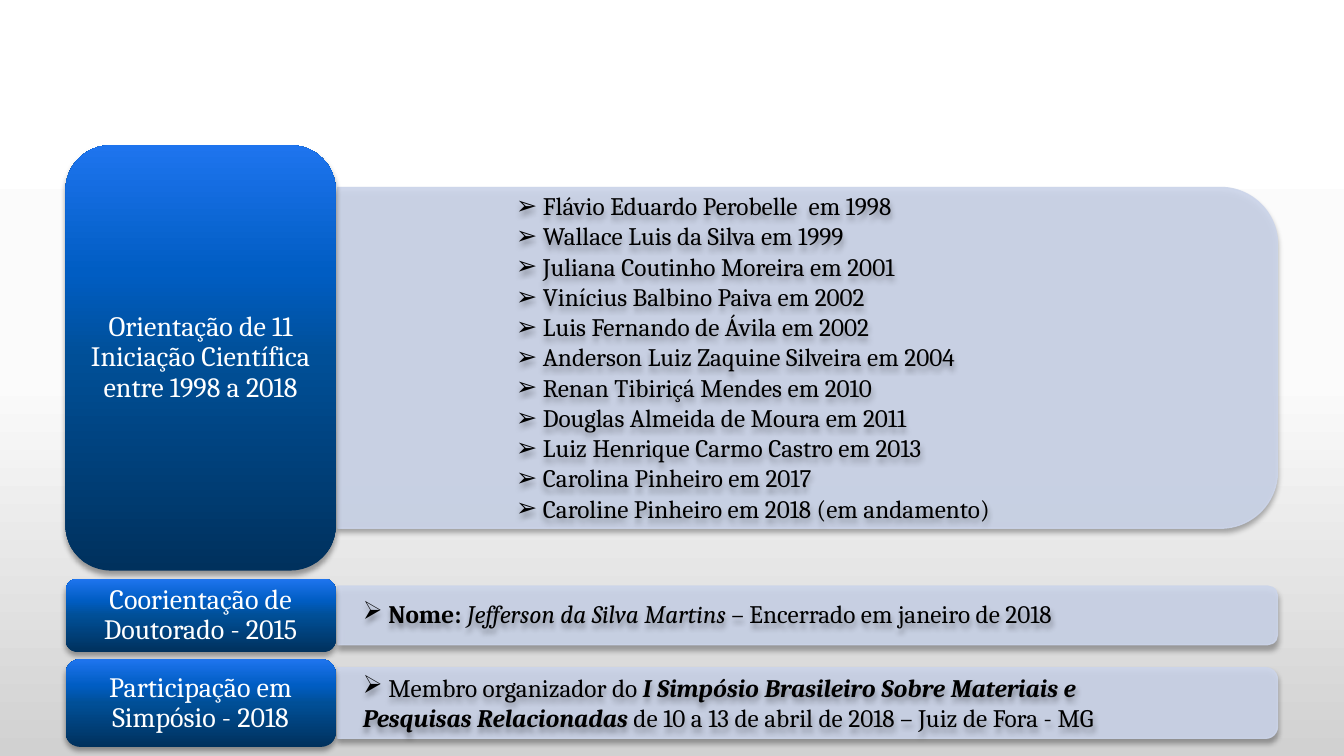
from dataclasses import dataclass

import pptx
import pptx.dml.color
import pptx.enum.shapes
import pptx.enum.text
import pptx.oxml
import pptx.oxml.ns
import pptx.util
from lxml import etree

Inches = pptx.util.Inches
Pt = pptx.util.Pt
qn = pptx.oxml.ns.qn
RGB = pptx.dml.color.RGBColor.from_string
SHAPE = pptx.enum.shapes.MSO_SHAPE
ALIGN = pptx.enum.text.PP_ALIGN
ANCHOR = pptx.enum.text.MSO_ANCHOR
FIT = pptx.enum.text.MSO_AUTO_SIZE


@dataclass(frozen=True)
class Theme:
    font: str = "Cambria"
    label_size: int = 20
    list_size: int = 18
    label_text: str = "FFFFFF"
    list_text: str = "000000"
    shadow: str = "000000"
    bar: str = "CCD5EA"
    label: tuple = ((0, "00315D"), (50, "004F97"), (70, "005DC3"), (100, "1E74EE"))
    page: tuple = ((0, "FFFFFF"), (50, "FBFBFB"), (100, "D1D1D1"))


@dataclass(frozen=True)
class Run:
    text: str
    bold: bool = False
    italic: bool = False


@dataclass(frozen=True)
class Row:
    label: str
    top: float
    height: float
    bar_height: float
    list_box: tuple[float, float, float, float]
    items: list[list[Run]]


THEME = Theme()
LABEL_LEFT, LABEL_WIDTH = 0.65, 2.68
BAR_LEFT, BAR_WIDTH = 3.35, 9.32

STUDENTS = [
    "Flávio Eduardo Perobelle  em 1998",
    "Wallace Luis da Silva em 1999",
    "Juliana Coutinho Moreira em 2001",
    "Vinícius Balbino Paiva em 2002",
    "Luis Fernando de Ávila em 2002",
    "Anderson Luiz Zaquine Silveira em 2004",
    "Renan Tibiriçá Mendes em 2010",
    "Douglas Almeida de Moura em 2011",
    "Luiz Henrique Carmo Castro em 2013",
    "Carolina Pinheiro em 2017",
    "Caroline Pinheiro em 2018 (em andamento)",
]
ROWS = [
    Row("Orientação de 11 Iniciação Científica entre 1998 a 2018", 1.44, 4.22, 3.38,
        (5.02, 1.84, 5.96, 3.43), [[Run(f" {name}")] for name in STUDENTS]),
    Row("Coorientação de Doutorado - 2015", 5.74, 0.73, 0.58,
        (3.5, 5.89, 7.98, 0.4),
        [[Run(" Nome: ", bold=True), Run("Jefferson da Silva Martins ", italic=True),
          Run("– Encerrado em janeiro de 2018")]]),
    Row("Participação em Simpósio - 2018", 6.54, 0.87, 0.7,
        (3.5, 6.62, 7.98, 0.71),
        [[Run(" Membro organizador do "),
          Run("I Simpósio Brasileiro Sobre Materiais e Pesquisas Relacionadas", True, True),
          Run(" de 10 a 13 de abril de 2018 – Juiz de Fora - MG")]]),
]


def set_format(target, values: dict) -> None:
    for name, value in values.items():
        setattr(target, name, value)


def set_gradient(fill, parent, stops: tuple, angle: int) -> None:
    """Swap the solid fill found under parent for a linear gradient, angle clockwise."""
    fill.solid()
    solid = next(parent.iter(qn("a:solidFill")))
    grad = etree.Element(qn("a:gradFill"), rotWithShape="1")
    stop_list = etree.SubElement(grad, qn("a:gsLst"))
    for position, color in stops:
        stop = etree.SubElement(stop_list, qn("a:gs"), pos=str(position * 1000))
        etree.SubElement(stop, qn("a:srgbClr"), val=color)
    etree.SubElement(grad, qn("a:lin"), ang=str(angle * 60000), scaled="0")
    solid.getparent().replace(solid, grad)


def add_shadow(sp) -> None:
    sp.shadow.inherit = False
    effects = sp._element.spPr.find(qn("a:effectLst"))
    outer = etree.SubElement(effects, qn("a:outerShdw"), blurRad=str(Pt(4)),
                             dist=str(Pt(3)), dir="5400000", rotWithShape="0")
    color = etree.SubElement(outer, qn("a:srgbClr"), val=THEME.shadow)
    etree.SubElement(color, qn("a:alpha"), val="35000")


def add_bar(shapes, row: Row) -> None:
    """Add the pale bar, a shape rounded at its top and turned to the right."""
    center_x = BAR_LEFT + BAR_WIDTH / 2
    center_y = row.top + row.height / 2
    sp = shapes.add_shape(
        SHAPE.ROUND_2_SAME_RECTANGLE,
        Inches(center_x - row.bar_height / 2), Inches(center_y - BAR_WIDTH / 2),
        Inches(row.bar_height), Inches(BAR_WIDTH))
    sp.rotation = 90
    for fill in (sp.fill, sp.line.fill):
        fill.solid()
        fill.fore_color.rgb = RGB(THEME.bar)
    sp.line.width = Pt(1)
    for color in sp._element.spPr.iter(qn("a:srgbClr")):
        etree.SubElement(color, qn("a:alpha"), val="90000")
    add_shadow(sp)


def add_label(shapes, row: Row) -> None:
    sp = shapes.add_shape(SHAPE.ROUNDED_RECTANGLE, Inches(LABEL_LEFT), Inches(row.top),
                          Inches(LABEL_WIDTH), Inches(row.height))
    set_gradient(sp.fill, sp._element.spPr, THEME.label, 270)
    sp.line.fill.background()
    add_shadow(sp)
    tf = sp.text_frame
    set_format(tf, dict(word_wrap=True, vertical_anchor=ANCHOR.MIDDLE,
                        margin_left=Inches(0.08), margin_right=Inches(0.08),
                        margin_top=Inches(0.04), margin_bottom=Inches(0.04)))
    p = tf.paragraphs[0]
    set_format(p, dict(alignment=ALIGN.CENTER, line_spacing=0.9))
    r = p.add_run()
    r.text = row.label
    set_format(r.font, dict(name=THEME.font, size=Pt(THEME.label_size)))
    r.font.color.rgb = RGB(THEME.label_text)


def fill_list(sp, row: Row) -> None:
    left, top, width, height = map(Inches, row.list_box)
    set_format(sp, dict(left=left, top=top, width=width, height=height))
    sp.fill.background()
    add_shadow(sp)
    tf = sp.text_frame
    set_format(tf, dict(word_wrap=True, auto_size=FIT.SHAPE_TO_FIT_TEXT,
                        vertical_anchor=ANCHOR.TOP,
                        margin_left=Inches(0.1), margin_right=Inches(0.1),
                        margin_top=Inches(0.05), margin_bottom=Inches(0.05)))
    for i, runs in enumerate(row.items):
        p = tf.add_paragraph() if i else tf.paragraphs[0]
        props = p._p.get_or_add_pPr()
        props.set("marL", "0")
        props.set("indent", "0")
        etree.SubElement(props, qn("a:buChar"), char="➢")
        set_format(p, dict(alignment=ALIGN.LEFT, space_before=Pt(0), space_after=Pt(0)))
        for run in runs:
            r = p.add_run()
            r.text = run.text
            set_format(r.font, dict(name=THEME.font, size=Pt(THEME.list_size),
                                    bold=run.bold, italic=run.italic))
            r.font.color.rgb = RGB(THEME.list_text)


def main() -> None:
    prs = pptx.Presentation()
    set_format(prs, dict(slide_width=Inches(13.33), slide_height=Inches(7.5)))
    s = prs.slides.add_slide(prs.slide_layouts[1])
    set_gradient(s.background.fill, s._element.cSld, THEME.page, 90)
    title = s.shapes.title._element
    title.getparent().remove(title)
    body = s.placeholders[1]

    for row in ROWS:
        group = s.shapes.add_group_shape()
        add_bar(group.shapes, row)
        add_label(group.shapes, row)

    s.shapes._spTree.append(body._element)  # the list lies in front of the bars
    fill_list(body, ROWS[0])
    for row in ROWS[1:]:
        fill_list(s.shapes.add_textbox(*map(Inches, row.list_box)), row)
    prs.save("out.pptx")


if __name__ == "__main__":
    main()
